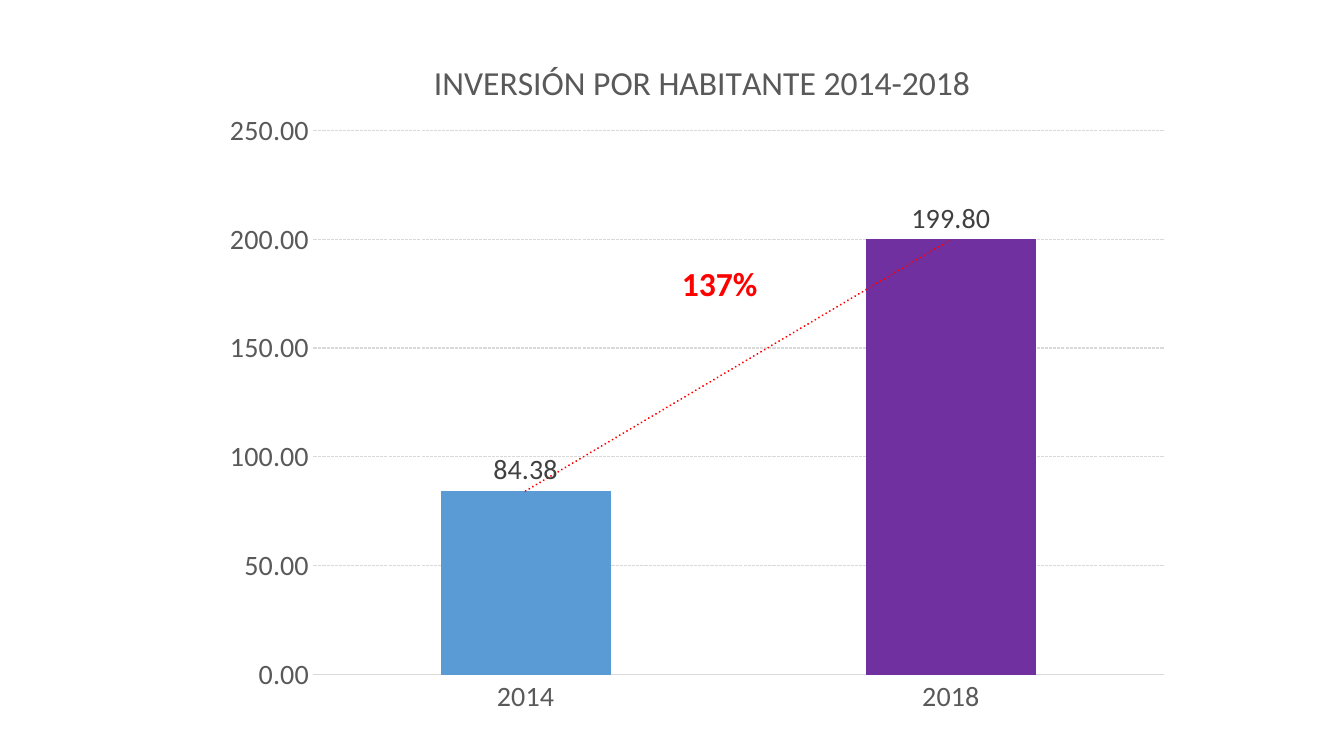
from lxml import etree
from pptx import Presentation
from pptx.chart.data import CategoryChartData
from pptx.dml.color import RGBColor
from pptx.enum.chart import XL_CHART_TYPE, XL_LABEL_POSITION, XL_TICK_MARK
from pptx.enum.dml import MSO_LINE
from pptx.enum.text import MSO_AUTO_SIZE
from pptx.oxml import parse_xml
from pptx.oxml.ns import nsdecls, qn
from pptx.util import Inches, Pt

COLUMN = XL_CHART_TYPE.COLUMN_CLUSTERED
OUTSIDE = XL_LABEL_POSITION.OUTSIDE_END
NO_TICK = XL_TICK_MARK.NONE
DASH = MSO_LINE.SQUARE_DOT
FIT_SHAPE = MSO_AUTO_SIZE.SHAPE_TO_FIT_TEXT

BLUE = RGBColor(0x5B, 0x9B, 0xD5)
PURPLE = RGBColor(0x70, 0x30, 0xA0)
RED = RGBColor(0xFF, 0x00, 0x00)
GRAY = RGBColor(0x59, 0x59, 0x59)
DARK = RGBColor(0x40, 0x40, 0x40)
PALE = RGBColor(0xD9, 0xD9, 0xD9)
FONT = "Calibri"


def style(font, size, color, bold=False):
    font.name = FONT
    font.size = Pt(size)
    font.bold = bold
    font.color.rgb = color


def place(parent, index, **shares):
    """Fix a chart part at shares of the chart's size."""
    for old in parent.findall(qn("c:layout")):
        parent.remove(old)
    layout = parse_xml(f"<c:layout {nsdecls('c')}/>")
    manual = etree.SubElement(layout, qn("c:manualLayout"))
    for tag, value in shares.items():
        etree.SubElement(manual, qn(f"c:{tag}")).set("val", str(value))
    parent.insert(index, layout)


prs = Presentation()
prs.slide_width, prs.slide_height = Inches(13.33), Inches(7.5)
W, H = prs.slide_width, prs.slide_height
slide = prs.slides.add_slide(prs.slide_layouts[6])

# Column chart
data = CategoryChartData(number_format="0.00")
data.categories = ["2014", "2018"]
data.add_series("Series 1", [84.38, 199.80])
chart = slide.shapes.add_chart(COLUMN, int(W * 0.156), int(H * 0.039),
                               int(W * 0.725), int(H * 0.925), data).chart
style(chart.font, 20, GRAY)
chart.has_legend = False
place(chart.plots[0]._element.getparent(), 0, layoutTarget="inner",
      xMode="edge", yMode="edge", x=0.106, y=0.144, w=0.873, h=0.779)

# Chart title
tf = chart.chart_title.text_frame
r = tf.paragraphs[0].add_run()
r.text = "INVERSIÓN POR HABITANTE 2014-2018"
style(r.font, 24, GRAY)
place(chart.chart_title._element, 1, xMode="edge", yMode="edge", x=0.224, y=0.035)

# Axes
for axis in (chart.category_axis, chart.value_axis):
    axis.major_tick_mark = axis.minor_tick_mark = NO_TICK
    style(axis.tick_labels.font, 20, GRAY)
cat_line = chart.category_axis.format.line
cat_line.color.rgb = PALE
cat_line.width = Pt(0.75)
value_axis = chart.value_axis
value_axis.minimum_scale, value_axis.maximum_scale = 0, 250
value_axis.major_unit = 50
value_axis.format.line.fill.background()
value_axis.tick_labels.number_format = "#,##0.00"
value_axis.tick_labels.number_format_is_linked = False
grid = value_axis.major_gridlines.format.line
grid.color.rgb = PALE
grid.width = Pt(0.75)
grid.dash_style = DASH

# Columns and their labels
plot = chart.plots[0]
plot.gap_width = 150
plot.vary_by_categories = False
series = plot.series[0]
series.format.fill.solid()
series.format.fill.fore_color.rgb = BLUE
last = series.points[1].format.fill
last.solid()
last.fore_color.rgb = PURPLE
labels = series.data_labels
labels.show_value = True
labels.number_format = "0.00"
labels.number_format_is_linked = False
labels.position = OUTSIDE
style(labels.font, 20, DARK)

# Trend line
trend = parse_xml(
    f'<c:trendline {nsdecls("c", "a")}><c:spPr><a:ln w="{Pt(1.5)}" cap="rnd">'
    f'<a:solidFill><a:srgbClr val="{RED}"/></a:solidFill><a:prstDash val="sysDot"/>'
    '</a:ln></c:spPr><c:trendlineType val="linear"/>'
    '<c:dispRSqr val="0"/><c:dispEq val="0"/></c:trendline>')
series._element.find(qn("c:cat")).addprevious(trend)

# Growth label
sp = slide.shapes.add_textbox(Inches(6.59), Inches(2.56), Inches(1.33), Inches(0.5))
tf = sp.text_frame
tf.word_wrap = True
tf.auto_size = FIT_SHAPE
r = tf.paragraphs[0].add_run()
r.text = " 137%"
style(r.font, 24, RED, bold=True)

prs.save("out.pptx")
